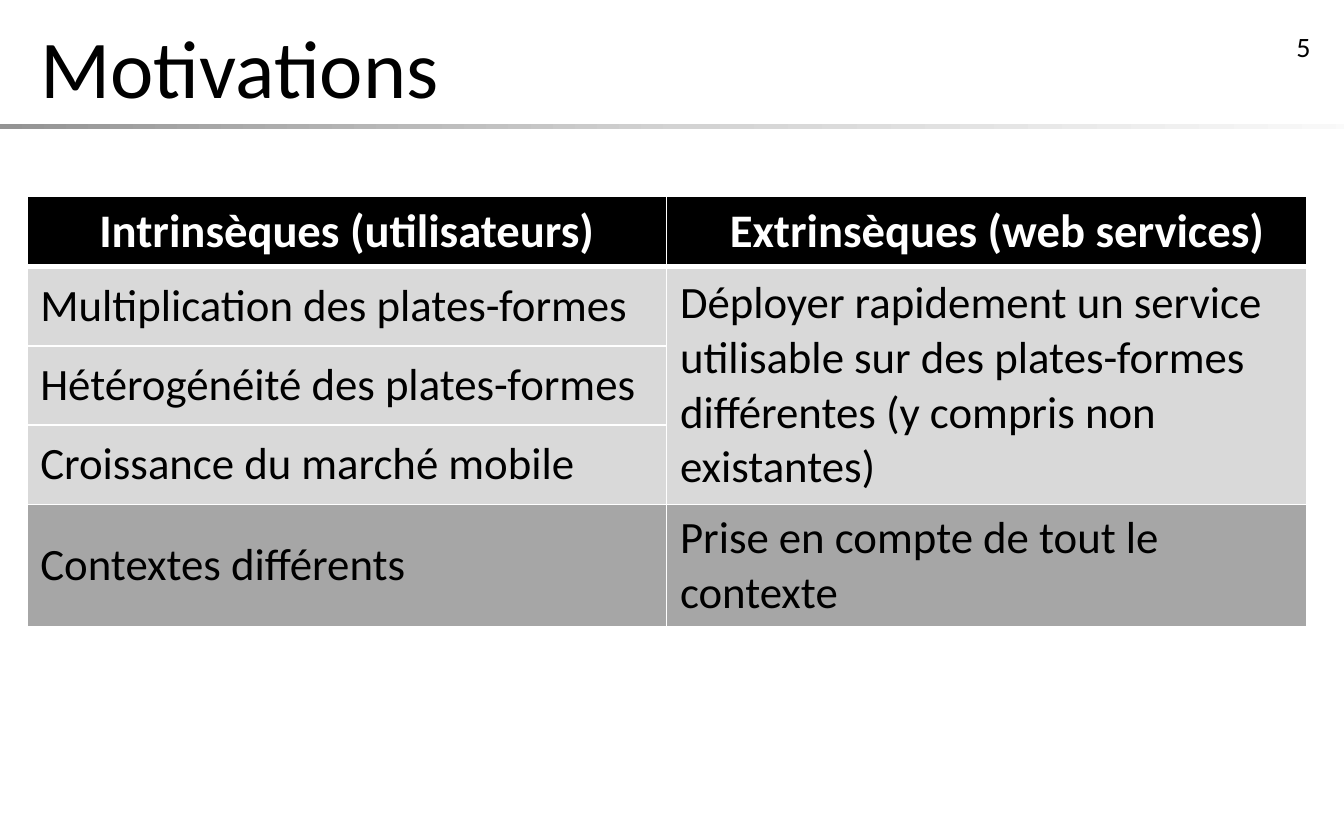
import copy

import pptx
import pptx.dml.color
import pptx.enum.shapes
import pptx.enum.text
import pptx.oxml
import pptx.oxml.ns
import pptx.util

Inches = pptx.util.Inches
Align = pptx.enum.text.PP_ALIGN
Anchor = pptx.enum.text.MSO_ANCHOR

COLORS = {
    "black": "000000",
    "white": "FFFFFF",
    "light": "D9D9D9",
    "dark": "A6A6A6",
    "rule_start": "949494",
    "rule_middle": "D3D3D3",
    "rule_end": "FAFAFA",
}


def rgb(name):
    return pptx.dml.color.RGBColor.from_string(COLORS[name])


class SlideBuilder:
    """Holds the style and the current slide."""

    font = "Calibri"

    def __init__(self, page):
        self.page = page

    def fill_text(self, frame, text, size, color="black", bold=False, align=Align.LEFT):
        frame.text = text
        frame.word_wrap = True
        para = frame.paragraphs[0]
        para.alignment = align
        for span in para.runs:
            span.font.name = self.font
            span.font.size = pptx.util.Pt(size)
            span.font.bold = bold
            span.font.color.rgb = rgb(color)

    def title(self, text, left, top, width, height):
        box = self.page.shapes.title
        box.left, box.top = Inches(left), Inches(top)
        box.width, box.height = Inches(width), Inches(height)
        self.fill_text(box.text_frame, text, 44)
        box.text_frame.auto_size = pptx.enum.text.MSO_AUTO_SIZE.NONE
        box.text_frame.vertical_anchor = Anchor.MIDDLE

    def text(self, text, left, top, width, height, size, align):
        box = self.page.shapes.add_textbox(
            Inches(left), Inches(top), Inches(width), Inches(height))
        self.fill_text(box.text_frame, text, size, align=align)

    def gradient_bar(self, left, top, width, height, colors):
        bar = self.page.shapes.add_shape(
            pptx.enum.shapes.MSO_SHAPE.RECTANGLE,
            Inches(left), Inches(top), Inches(width), Inches(height))
        bar.shadow.inherit = False
        bar.line.fill.background()
        bar.fill.gradient()
        bar.fill.gradient_angle = 0
        # The default gradient has two stops: add one for the middle colour
        stop_list = bar.fill._fill._gradFill.gsLst
        stop_list.append(copy.deepcopy(stop_list[-1]))
        stops = bar.fill.gradient_stops
        for index, (stop, color) in enumerate(zip(stops, colors)):
            stop.position = index / (len(colors) - 1)
            stop.color.rgb = rgb(color)

    def borders(self, cell, bottom=1):
        properties = cell._tc.get_or_add_tcPr()
        widths = {"lnL": 1, "lnR": 1, "lnT": 1, "lnB": bottom}
        for index, (tag, width) in enumerate(widths.items()):
            properties.insert(index, pptx.oxml.parse_xml(
                f'<a:{tag} {pptx.oxml.ns.nsdecls("a")} w="{pptx.util.Pt(width)}">'
                f'<a:solidFill><a:srgbClr val="{COLORS["white"]}"/></a:solidFill>'
                f'</a:{tag}>'))

    def table(self, rows, fills, left, top, width, heights, merges):
        columns = len(rows[0])
        table = self.page.shapes.add_table(
            len(rows), columns, Inches(left), Inches(top),
            Inches(width), Inches(sum(heights))).table
        for row, height in zip(table.rows, heights):
            row.height = Inches(height)
        for r, (texts, fill) in enumerate(zip(rows, fills)):
            header = r == 0
            for c, text in enumerate(texts):
                cell = table.cell(r, c)
                cell.fill.solid()
                cell.fill.fore_color.rgb = rgb(fill)
                self.borders(cell, bottom=3 if header else 1)
                if header:
                    self.fill_text(cell.text_frame, text, 25, "white", True, Align.CENTER)
                elif text:
                    self.fill_text(cell.text_frame, text, 24)
                    cell.vertical_anchor = Anchor.MIDDLE
        for first, last in merges:
            table.cell(*first).merge(table.cell(*last))


def main():
    deck = pptx.Presentation()
    deck.slide_width, deck.slide_height = Inches(10), Inches(6.25)
    title_only = deck.slide_layouts[5]
    builder = SlideBuilder(deck.slides.add_slide(title_only))

    # Heading with its fading rule
    builder.gradient_bar(0, 0.92, 10.2, 0.04, ["rule_start", "rule_middle", "rule_end"])
    builder.title("Motivations", 0.2, 0.05, 9.29, 0.87)

    # Motivations table: the first extrinsic reason spans three rows
    rows = [
        ("Intrinsèques (utilisateurs)", "  Extrinsèques (web services)"),
        ("Multiplication des plates-formes",
         "Déployer rapidement un service utilisable sur des plates-formes "
         "différentes (y compris non existantes)"),
        ("Hétérogénéité des plates-formes", ""),
        ("Croissance du marché mobile", ""),
        ("Contextes différents", "Prise en compte de tout le contexte"),
    ]
    builder.table(
        rows, ["black"] + ["light"] * 3 + ["dark"], 0.2, 1.46, 9.52,
        [0.51] + [0.59] * 3 + [0.91], merges=[((1, 1), (3, 1))])

    # Page number
    builder.text("5", 7.52, 0.17, 2.33, 0.33, 15, Align.RIGHT)

    deck.save("out.pptx")


if __name__ == "__main__":
    main()
